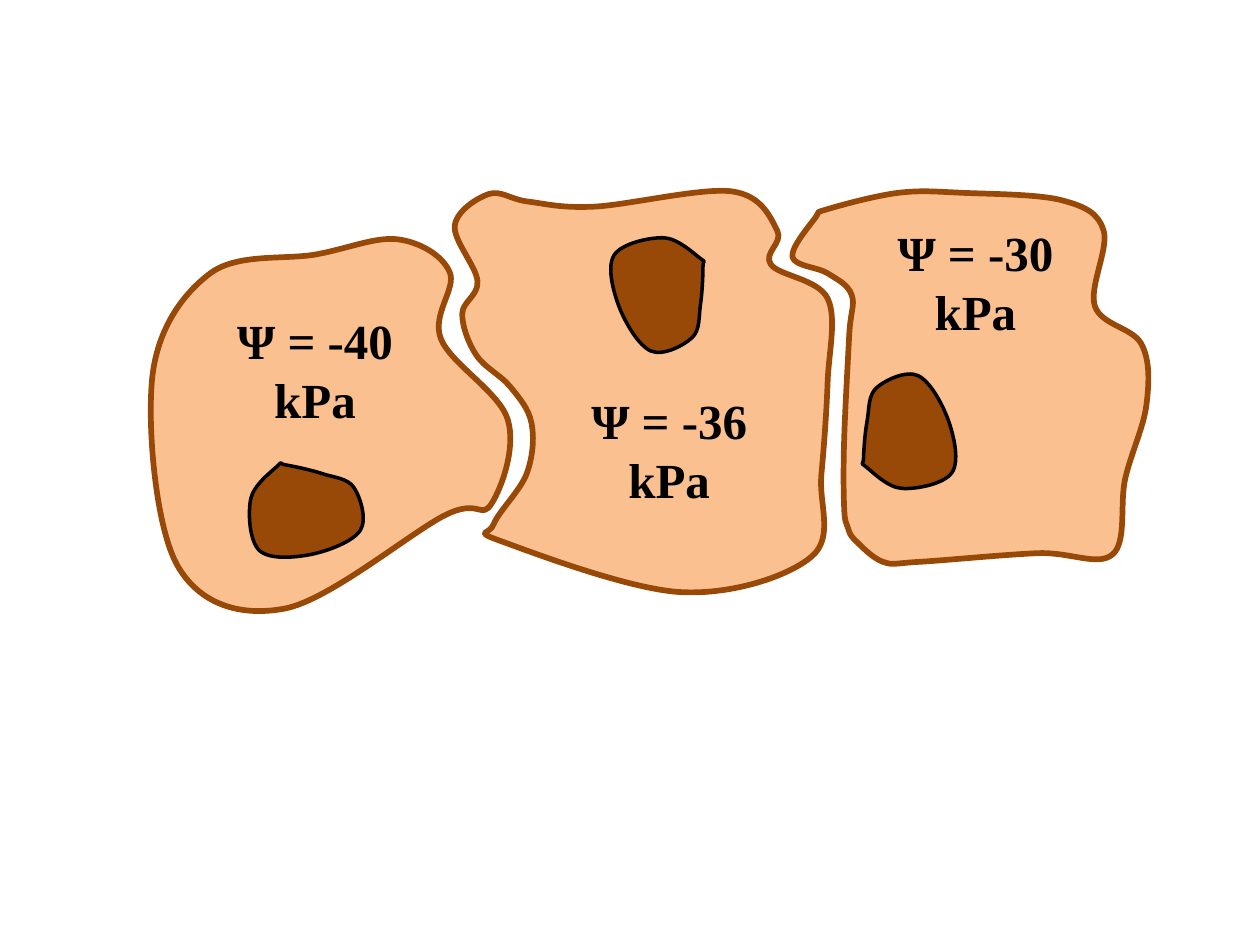
import pptx
import pptx.dml.color
import pptx.enum.text
import pptx.oxml
import pptx.oxml.ns
import pptx.util

Pt = pptx.util.Pt
RGB = pptx.dml.color.RGBColor
qn = pptx.oxml.ns.qn

PEACH = RGB(0xFA, 0xC0, 0x90)
BROWN = RGB(0x98, 0x48, 0x07)
BLACK = RGB(0x00, 0x00, 0x00)
FONT = "Times New Roman"

# Knots of each closed outline, in points from the top left of its box.
LEFT = [(96.7, 10.4), (36.2, 21.2), (3.1, 80.3), (17.5, 188.3),
        (78.7, 212.8), (170.2, 159.5), (196.8, 153), (206.2, 104.8),
        (168, 58.7), (173, 20.5), (143.5, 1.8)]
MIDDLE = [(1.9, 21.9), (14.9, 53.6), (6.2, 72.3), (14.2, 96), (33.6, 114),
          (45.8, 134.9), (43, 163.7), (24.2, 192.5), (29.3, 202.6),
          (131.5, 231.4), (205.7, 211.2), (211.4, 164.4), (215, 111.2),
          (215, 63.6), (182.6, 44.2), (186.2, 24.8), (160.3, 2.4),
          (81.8, 11.1), (43.7, 8.2), (21.4, 3.9)]
RIGHT = [(14.8, 15.6), (1.9, 37.9), (22, 47.2), (35.7, 59.5), (34.3, 82.5),
         (31.4, 142.3), (31.4, 181.2), (33.6, 192.7), (37.9, 199.9),
         (53.7, 212.1), (73.9, 212.1), (142.3, 207.1), (184.8, 207.8),
         (192, 164.6), (204.2, 122.1), (201.3, 87.6), (174.7, 66),
         (179.7, 22.8), (156, 5.5), (99.1, 1.2), (62.4, 1.2), (22, 10.5)]
CORE = [(17.4, 3.4), (2.3, 22.1), (7.3, 51.6), (36.8, 53.8),
        (64.9, 40.1), (61.3, 15.6), (43.3, 7.7), (22.4, 2.7)]

# Box corner, outline, core corner and turn, label corner and text.
CELLS = [
    ((84, 135), LEFT, (57, 128), 0, (34, 39), "Ψ = -40 kPa"),
    ((258, 107), MIDDLE, (85.5, 33.5), 80.4, (62.4, 112.6), "Ψ = -36 kPa"),
    ((451, 109), RIGHT, (31.5, 108.5), 262.1, (44.4, 14.8), "Ψ = -30 kPa"),
]


def shift(point, by):
    return point[0] + by[0], point[1] + by[1]


def smooth(knots):
    """Return three Bezier points per span of a closed curve through knots."""
    count = len(knots)
    slopes = [((knots[(i + 1) % count][0] - knots[i - 1][0]) / 6,
               (knots[(i + 1) % count][1] - knots[i - 1][1]) / 6)
              for i in range(count)]
    points = []
    for i in range(count):
        j = (i + 1) % count
        back = (-slopes[j][0], -slopes[j][1])
        points += [shift(knots[i], slopes[i]), shift(knots[j], back), knots[j]]
    return points


def add_blob(slide, corner, knots, fill, line, width, turn=0):
    start, *points = [tuple(Pt(v) for v in shift(p, corner))
                      for p in [knots[0]] + smooth(knots)]
    pen = slide.shapes.build_freeform(*start)
    pen.add_line_segments(points, close=True)
    blob = pen.convert_to_shape()

    # Every three straight segments hold the points of one Bezier span.
    track = next(blob._element.iter(qn("a:path")))
    lines = track.findall(qn("a:lnTo"))
    for i in range(0, len(lines), 3):
        curve = pptx.oxml.parse_xml(
            f"<a:cubicBezTo {pptx.oxml.ns.nsdecls('a')}/>")
        lines[i].addprevious(curve)
        for part in lines[i:i + 3]:
            curve.append(part[0])
            track.remove(part)

    blob.shadow.inherit = False
    blob.fill.solid()
    blob.fill.fore_color.rgb = fill
    blob.line.color.rgb = line
    blob.line.width = Pt(width)
    blob.rotation = turn


def add_text(slide, text, corner, width=124, height=75, size=28,
             bold=True, color=BLACK):
    box = slide.shapes.add_textbox(*map(Pt, (*corner, width, height)))
    frame = box.text_frame
    frame.word_wrap = True
    frame.auto_size = pptx.enum.text.MSO_AUTO_SIZE.SHAPE_TO_FIT_TEXT
    para = frame.paragraphs[0]
    para.alignment = pptx.enum.text.PP_ALIGN.CENTER
    run = para.add_run()
    run.text = text
    run.font.name = FONT
    run.font.size = Pt(size)
    run.font.bold = bold
    run.font.color.rgb = color


def add_cell(slide, corner, knots, core, turn, spot, text):
    add_blob(slide, corner, knots, PEACH, BROWN, 3.25)
    add_blob(slide, shift(corner, core), CORE, BROWN, BLACK, 2, turn)
    add_text(slide, text, shift(corner, spot))


def main():
    deck = pptx.Presentation()
    deck.slide_width, deck.slide_height = Pt(720), Pt(540)
    slide = deck.slides.add_slide(deck.slide_layouts[6])
    for cell in CELLS:
        add_cell(slide, *cell)
    deck.save("out.pptx")


if __name__ == "__main__":
    main()
